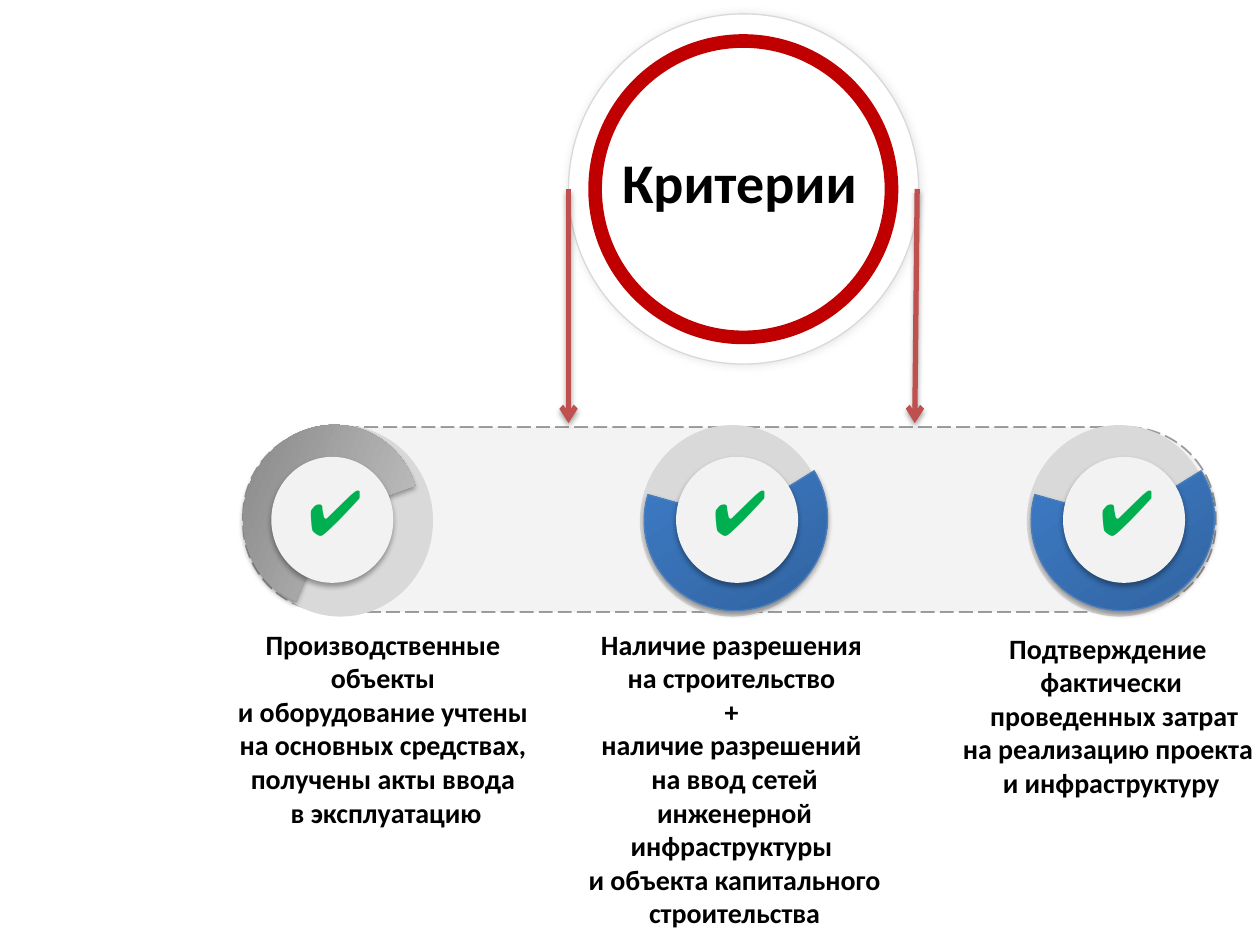
from lxml import etree
from pptx import Presentation
from pptx.dml.color import RGBColor
from pptx.enum import dml, shapes, text
from pptx.oxml.ns import qn
from pptx.util import Cm, Pt

WHITE = RGBColor(0xFF, 0xFF, 0xFF)
BLACK = RGBColor(0, 0, 0)
PALE = RGBColor(0xF2, 0xF2, 0xF2)
SILVER = RGBColor(0xD9, 0xD9, 0xD9)
SHADE = RGBColor(0xBF, 0xBF, 0xBF)
GREY = RGBColor(0x80, 0x80, 0x80)
DARK = RGBColor(0x40, 0x40, 0x40)
RED = RGBColor(0xC0, 0, 0)
ARROW_RED = RGBColor(0xC0, 0x50, 0x4D)
GREEN = RGBColor(0, 0xB0, 0x50)
BLUE_LINE = RGBColor(0x4B, 0x7E, 0xBC)
GREY_STOPS = [(0, GREY), (80, SHADE), (100, SILVER)]
BLUE_STOPS = [(0, RGBColor(0x2F, 0x5F, 0x99)), (80, RGBColor(0x3D, 0x7C, 0xC7)),
              (100, RGBColor(0x3A, 0x7C, 0xCB))]
SOFT_SHADOW = (BLACK, 35, 3.1, 1.8, 90)
PIE_SWEEP = 136.509

MSO = shapes.MSO_SHAPE


def add_child(parent, tag, **attrs):
    return etree.SubElement(parent, qn(tag), {k: str(v) for k, v in attrs.items()})


def set_alpha(fill_parent, percent):
    color = fill_parent.find(qn("a:solidFill")).find(qn("a:srgbClr"))
    add_child(color, "a:alpha", val=percent * 1000)


def set_shadow(s, color, alpha, blur, dist, angle):
    """Give the shape an outer shadow; blur and distance are in points."""
    sp_pr = s.element.spPr
    effects = sp_pr.find(qn("a:effectLst"))
    if effects is None:
        effects = add_child(sp_pr, "a:effectLst")
    outer = add_child(effects, "a:outerShdw", blurRad=Pt(blur), dist=Pt(dist),
                      dir=angle * 60000, rotWithShape=0)
    rgb = add_child(outer, "a:srgbClr", val=color)
    add_child(rgb, "a:alpha", val=alpha * 1000)


def set_gradient(s, stops):
    s.fill.gradient()
    s.fill.gradient_angle = 90
    stop_list = s.element.spPr.find(qn("a:gradFill")).find(qn("a:gsLst"))
    for old in list(stop_list):
        stop_list.remove(old)
    for position, color in stops:
        stop = add_child(stop_list, "a:gs", pos=position * 1000)
        add_child(stop, "a:srgbClr", val=color)


def add_figure(slide, kind, x, y, w, h, fill, line=None, line_width=0.75, shadow=None):
    """Add a preset shape; fill is a colour or a list of gradient stops."""
    s = slide.shapes.add_shape(kind, Cm(x), Cm(y), Cm(w), Cm(h))
    s.shadow.inherit = False
    if isinstance(fill, list):
        set_gradient(s, fill)
    else:
        s.fill.solid()
        s.fill.fore_color.rgb = fill
    if line is None:
        s.line.fill.background()
    else:
        s.line.color.rgb = line
        s.line.width = Pt(line_width)
    if shadow:
        set_shadow(s, *shadow)
    return s


def add_label(slide, x, y, w, h, paragraphs, size, color=BLACK, bold=True,
              align=text.PP_ALIGN.CENTER, anchor=text.MSO_ANCHOR.TOP):
    tf = slide.shapes.add_textbox(Cm(x), Cm(y), Cm(w), Cm(h)).text_frame
    tf.word_wrap = True
    tf.vertical_anchor = anchor
    for i, content in enumerate(paragraphs):
        p = tf.add_paragraph() if i else tf.paragraphs[0]
        p.text = content
        p.alignment = align
        for r in p.runs:
            r.font.name = "Calibri"
            r.font.size = Pt(size)
            r.font.bold = bold
            r.font.color.rgb = color


def add_arrow(slide, x1, y1, x2, y2):
    line = slide.shapes.add_connector(shapes.MSO_CONNECTOR.STRAIGHT,
                                      Cm(x1), Cm(y1), Cm(x2), Cm(y2))
    line.line.color.rgb = ARROW_RED
    line.line.width = Pt(3)
    add_child(line.element.spPr.find(qn("a:ln")), "a:tailEnd", type="arrow")
    set_shadow(line, *SOFT_SHADOW)


def add_band(slide):
    band = add_figure(slide, MSO.ROUNDED_RECTANGLE, 4.9, 8.61, 19.61, 3.73, SILVER, DARK, 1)
    band.adjustments[0] = 0.481
    band.line.dash_style = dml.MSO_LINE.LONG_DASH
    sp_pr = band.element.spPr
    set_alpha(sp_pr, 30)
    set_alpha(sp_pr.find(qn("a:ln")), 50)


def add_dial(slide, ring_x, core_x, stops, line, rotation, pie_h):
    """Add a grey disc, a partial ring over it, and a hub with a tick."""
    add_figure(slide, MSO.OVAL, ring_x, 8.57, 3.73, 3.86, SILVER)
    pie = add_figure(slide, MSO.PIE, core_x + 0.08, 8.64, 3.71, pie_h, stops, line,
                     shadow=SOFT_SHADOW)
    pie.adjustments[0] = 0
    pie.adjustments[1] = PIE_SWEEP
    pie.rotation = rotation
    add_figure(slide, MSO.OVAL, core_x + 0.73, 9.21, 2.46, 2.54, PALE, shadow=SOFT_SHADOW)
    add_label(slide, core_x + 0.99, 9.4, 2.06, 1.8, ["✔"], 36, GREEN, bold=False)


def add_heading(slide):
    add_figure(slide, MSO.OVAL, 11.46, 0.28, 7.06, 7.06, WHITE, SILVER,
               shadow=(SHADE, 40, 5, 0, 0))
    ring = add_figure(slide, MSO.DONUT, 11.86, 0.69, 6.25, 6.25, RED)
    ring.adjustments[0] = 0.044
    add_label(slide, 12.29, 2.16, 5.59, 2.97, ["Критерии"], 32,
              align=text.PP_ALIGN.LEFT, anchor=text.MSO_ANCHOR.MIDDLE)


def main():
    prs = Presentation()
    prs.slide_width, prs.slide_height = Cm(25.4), Cm(19.05)
    slide = prs.slides.add_slide(prs.slide_layouts[6])

    add_heading(slide)
    add_band(slide)
    add_arrow(slide, 11.46, 3.81, 11.46, 8.53)
    add_arrow(slide, 18.49, 3.81, 18.44, 8.53)

    add_dial(slide, 5, 4.74, GREY_STOPS, None, 112.5, 3.53)
    for x in (12.9, 20.7):
        add_dial(slide, x, x, BLUE_STOPS, BLUE_LINE, 328.2, 3.66)

    add_label(slide, 4.09, 12.52, 7.39, 4.37, [
        "Производственные \nобъекты \nи оборудование учтены \n"
        "на основных средствах, \nполучены акты ввода \nв эксплуатацию"], 16)
    add_label(slide, 11.51, 12.52, 6.6, 6.4, [
        "Наличие разрешения \nна строительство \n+ \nналичие разрешений \n"
        "на ввод сетей инженерной инфраструктуры \n"
        "и объекта капитального строительства"], 16)
    add_label(slide, 19.1, 12.6, 6.6, 3.68, [
        "Подтверждение \nфактически", " проведенных затрат",
        "на реализацию проекта \nи инфраструктуру"], 16)

    prs.save("out.pptx")


if __name__ == "__main__":
    main()
